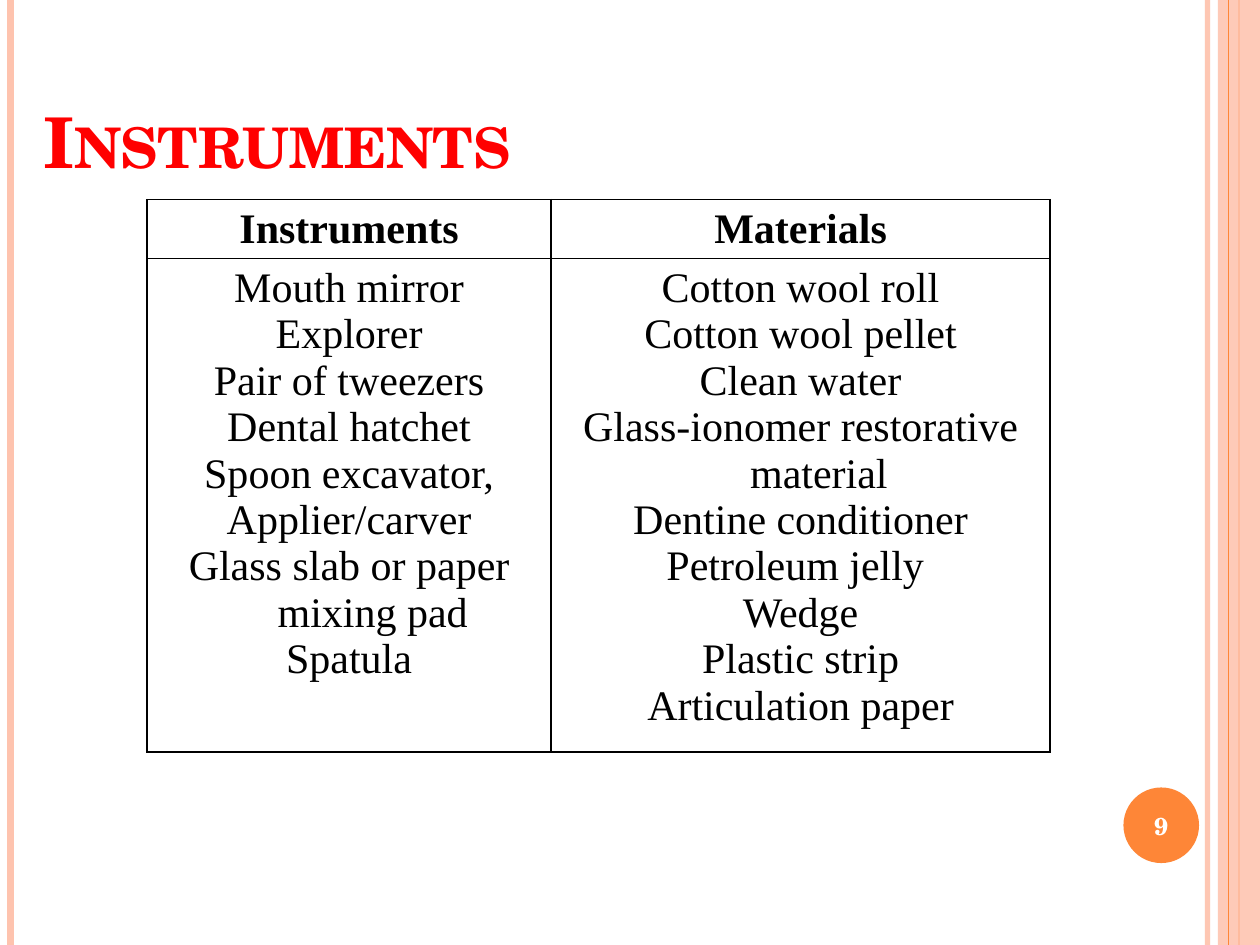
from lxml.etree import SubElement
from pptx import Presentation
from pptx.dml.color import RGBColor
from pptx.enum.shapes import MSO_CONNECTOR, MSO_SHAPE
from pptx.enum.text import MSO_ANCHOR, MSO_AUTO_SIZE, PP_ALIGN
from pptx.oxml import parse_xml
from pptx.oxml.ns import nsdecls, qn
from pptx.util import Pt

WIDTH, HEIGHT = 720, 540
PEACH = RGBColor(0xFE, 0xC3, 0xAE)
ORANGE = RGBColor(0xFE, 0x86, 0x37)
RED = RGBColor(0xFF, 0x00, 0x00)
BLACK = RGBColor(0x00, 0x00, 0x00)
WHITE = RGBColor(0xFF, 0xFF, 0xFF)
HEADING_FONT = "TeX Gyre Schola"
TABLE_FONT = "Times New Roman"
HANGING_INDENT = 27

COLUMNS = {
    "Instruments": [
        "Mouth mirror",
        "Explorer",
        "Pair of tweezers",
        "Dental hatchet",
        "Spoon excavator,",
        "Applier/carver",
        "Glass slab or paper mixing pad",
        "Spatula",
    ],
    "Materials": [
        "Cotton wool roll",
        "Cotton wool pellet",
        "Clean water",
        "Glass-ionomer restorative material ",
        "Dentine conditioner",
        "Petroleum jelly ",
        "Wedge",
        "Plastic strip",
        "Articulation paper",
    ],
}


def set_font(font, name, size, color, bold):
    """Apply a typeface, size in points, colour and weight."""
    font.name, font.size, font.bold = name, Pt(size), bold
    font.color.rgb = color


def set_opacity(fill_parent, percent):
    """Make the solid fill inside an element partly transparent."""
    color = fill_parent.find(qn("a:solidFill"))[0]
    SubElement(color, qn("a:alpha"), val=str(percent * 1000))


def add_stripe(slide, x, weight, color, opacity=100):
    """Draw a vertical line over the full slide height."""
    line = slide.shapes.add_connector(
        MSO_CONNECTOR.STRAIGHT, Pt(x), Pt(0), Pt(x), Pt(HEIGHT))
    line.line.color.rgb = color
    line.line.width = Pt(weight)
    properties = line._element.spPr
    if opacity < 100:
        set_opacity(properties.find(qn("a:ln")), opacity)
    SubElement(properties, qn("a:effectLst"))


def add_filled_shape(slide, kind, left, top, width, height, color):
    """Add a preset shape with a plain fill and no outline."""
    shape = slide.shapes.add_shape(kind, Pt(left), Pt(top), Pt(width), Pt(height))
    shape.shadow.inherit = False
    shape.fill.solid()
    shape.fill.fore_color.rgb = color
    shape.line.fill.background()
    return shape


def add_side_bands(slide, left, width):
    """Draw the stripes along both edges, with the right band at the given place."""
    add_stripe(slide, left - 6, 3, PEACH, 93)
    add_stripe(slide, 6, 4.5, PEACH)
    add_stripe(slide, left + width / 2, 1.5, ORANGE)
    band = add_filled_shape(
        slide, MSO_SHAPE.RECTANGLE, left, 0, width, HEIGHT, PEACH)
    set_opacity(band._element.spPr, 87)
    add_stripe(slide, left + width / 4, 0.75, ORANGE)


def add_page_badge(slide, left, top, size, number):
    """Place the page number in a filled circle."""
    badge = add_filled_shape(
        slide, MSO_SHAPE.OVAL, left, top, size, size, ORANGE)
    frame = badge.text_frame
    frame.margin_left = frame.margin_right = Pt(0)
    frame.margin_top = frame.margin_bottom = Pt(0)
    frame.vertical_anchor = MSO_ANCHOR.MIDDLE
    frame.text = str(number)
    paragraph = frame.paragraphs[0]
    paragraph.alignment = PP_ALIGN.CENTER
    set_font(paragraph.runs[0].font, HEADING_FONT, 14, WHITE, True)


def place_title(slide, left, top, width, height, text):
    """Move and format the title placeholder."""
    title = slide.shapes.title
    title.left, title.top = Pt(left), Pt(top)
    title.width, title.height = Pt(width), Pt(height)
    frame = title.text_frame
    frame.text = text
    frame.auto_size = MSO_AUTO_SIZE.NONE
    frame.vertical_anchor = MSO_ANCHOR.BOTTOM
    paragraph = frame.paragraphs[0]
    paragraph.alignment = PP_ALIGN.LEFT
    run = paragraph.runs[0]
    set_font(run.font, HEADING_FONT, 40, RED, True)
    run._r.get_or_add_rPr().set("cap", "small")


def add_borders(cell):
    """Outline a cell on all four sides."""
    properties = cell._tc.get_or_add_tcPr()
    for index, side in enumerate(("lnL", "lnR", "lnT", "lnB")):
        properties.insert(index, parse_xml(
            f'<a:{side} {nsdecls("a")} w="{Pt(1)}"><a:solidFill>'
            f'<a:srgbClr val="{BLACK}"/></a:solidFill></a:{side}>'))


def fill_cell(cell, lines, bold):
    """Write centred paragraphs with a hanging indent into a cell."""
    cell.fill.background()
    add_borders(cell)
    cell.text_frame.text = "\n".join(lines)
    for paragraph in cell.text_frame.paragraphs:
        paragraph.alignment = PP_ALIGN.CENTER
        properties = paragraph._p.get_or_add_pPr()
        properties.set("marL", str(Pt(HANGING_INDENT)))
        properties.set("indent", str(-Pt(HANGING_INDENT)))
        set_font(paragraph.runs[0].font, TABLE_FONT, 24, BLACK, bold)


def add_supply_table(slide, left, top, column_widths, row_heights):
    """Build the table of instruments and materials."""
    table = slide.shapes.add_table(
        len(row_heights), len(column_widths), Pt(left), Pt(top),
        Pt(sum(column_widths)), Pt(sum(row_heights))).table
    table.horz_banding = False
    for row, height in zip(table.rows, row_heights):
        row.height = Pt(height)
    for index, (heading, items) in enumerate(COLUMNS.items()):
        table.columns[index].width = Pt(column_widths[index])
        fill_cell(table.cell(0, index), [heading], True)
        fill_cell(table.cell(1, index), items, False)


def main():
    """Build and save the slide."""
    presentation = Presentation()
    presentation.slide_width, presentation.slide_height = Pt(WIDTH), Pt(HEIGHT)
    slide = presentation.slides.add_slide(presentation.slide_layouts[5])
    add_side_bands(slide, 696, 24)
    place_title(slide, 17.5, 18, 589, 90, "Instruments")
    add_supply_table(slide, 84, 114, (231, 285), (33.75, 282))
    add_page_badge(slide, 642, 450, 43.2, 9)
    presentation.save("out.pptx")


if __name__ == "__main__":
    main()
